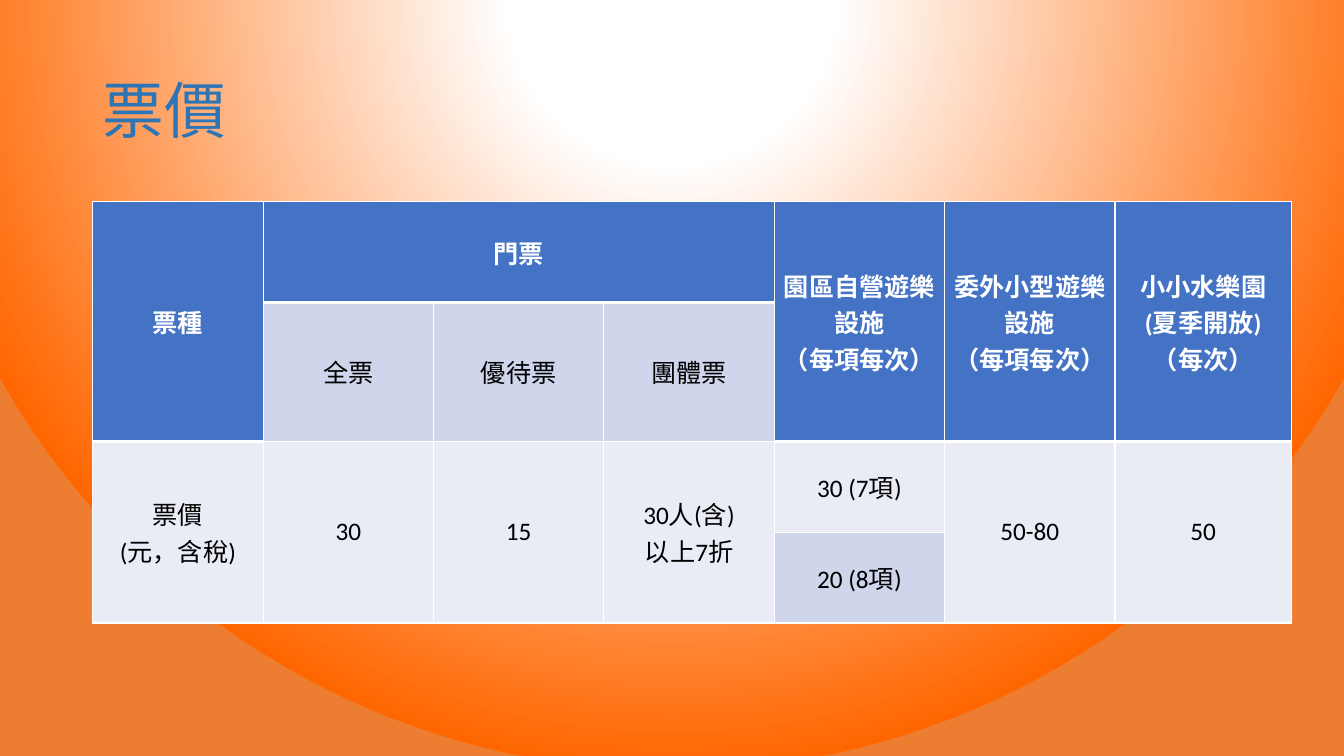
"""Build the ticket price slide."""
from lxml.etree import SubElement
from pptx import Presentation
from pptx.dml.color import RGBColor
from pptx.enum.text import MSO_ANCHOR, PP_ALIGN
from pptx.oxml import parse_xml
from pptx.oxml.ns import qn
from pptx.util import Inches, Pt

WHITE = RGBColor(0xFF, 0xFF, 0xFF)
BLACK = RGBColor(0x00, 0x00, 0x00)
BRIGHT_ORANGE = RGBColor(0xFF, 0x66, 0x00)
DULL_ORANGE = RGBColor(0xED, 0x7D, 0x31)
TITLE_BLUE = RGBColor(0x2E, 0x75, 0xB6)
HEADER_BLUE = RGBColor(0x44, 0x72, 0xC4)
DARK_BAND = RGBColor(0xCF, 0xD5, 0xEA)
LIGHT_BAND = RGBColor(0xE9, 0xEB, 0xF5)

COLUMN_WIDTHS = [1.69] * 6 + [1.75]
ROW_HEIGHTS = [1, 1.38, 0.9, 0.9]
HEADERS = [
    (0, 2, 1, "票種"),
    (1, 1, 3, "門票"),
    (4, 2, 1, "園區自營遊樂設施\n（每項每次）"),
    (5, 2, 1, "委外小型遊樂設施\n（每項每次）"),
    (6, 2, 1, "小小水樂園\n(夏季開放)\n（每次）"),
]
TICKET_KINDS = ["全票", "優待票", "團體票"]
PRICES = ["票價\n(元，含稅)", "30", "15", "30人(含)\n以上7折", "30 (7項)", "50-80", "50"]
SPLIT_COLUMN = 4


class SlideBuilder:
    """Hold the fonts and the current slide."""

    latin_font = "Calibri"
    asian_font = "Noto Sans CJK SC"

    def __init__(self, page):
        """Keep the page to draw on."""
        self.page = page

    def background(self, stops):
        """Fill the page with a circular gradient."""
        stop_xml = "".join(
            f'<a:gs pos="{percent * 1000}"><a:srgbClr val="{color}"/></a:gs>'
            for percent, color in stops
        )
        self.page.element.cSld.insert(0, parse_xml(
            '<p:bg xmlns:p="http://schemas.openxmlformats.org/presentationml/2006/main"'
            ' xmlns:a="http://schemas.openxmlformats.org/drawingml/2006/main"><p:bgPr>'
            f'<a:gradFill rotWithShape="1"><a:gsLst>{stop_xml}</a:gsLst><a:path path="circle">'
            '<a:fillToRect l="50000" t="-80000" r="50000" b="180000"/></a:path></a:gradFill>'
            "<a:effectLst/></p:bgPr></p:bg>"
        ))

    def add_text(self, para, text, size, color, bold=False, font=latin_font):
        """Add text to a paragraph, one run for each line."""
        for index, line in enumerate(text.split("\n")):
            if index:
                para.add_line_break()
            span = para.add_run()
            span.text = line
            span.font.size = Pt(size)
            span.font.bold = bold
            span.font.color.rgb = color
            span.font.name = font
            properties = span._r.get_or_add_rPr()
            SubElement(properties, qn("a:ea")).set("typeface", self.asian_font)

    def title(self, text, left, top, width, height):
        """Add the slide title."""
        box = self.page.shapes.add_textbox(
            Inches(left), Inches(top), Inches(width), Inches(height))
        frame = box.text_frame
        frame.word_wrap = True
        frame.vertical_anchor = MSO_ANCHOR.MIDDLE
        para = frame.paragraphs[0]
        para.line_spacing = 0.9
        self.add_text(para, text, 44, TITLE_BLUE, font=self.asian_font)

    def table(self, left, top, widths, heights):
        """Add an empty table with the given column widths and row heights."""
        table = self.page.shapes.add_table(
            len(heights), len(widths), Inches(left), Inches(top),
            Inches(sum(widths)), Inches(sum(heights))).table
        for column, width in zip(table.columns, widths):
            column.width = Inches(width)
        for row, height in zip(table.rows, heights):
            row.height = Inches(height)
        return table

    def borders(self, cell, bottom, top):
        """Draw white borders around a cell."""
        properties = cell._tc.get_or_add_tcPr()
        sides = [("lnL", 1), ("lnR", 1), ("lnT", top), ("lnB", bottom)]
        for index, (side, points) in enumerate(sides):
            line = properties.makeelement(qn(f"a:{side}"), {"w": str(int(Pt(points)))})
            fill = SubElement(line, qn("a:solidFill"))
            SubElement(fill, qn("a:srgbClr")).set("val", str(WHITE))
            properties.insert(index, line)

    def cell(self, table, row, column, text, fill, rows=1, columns=1, header=False, top=1):
        """Fill one table cell, merged over the given rows and columns."""
        origin = table.cell(row, column)
        if rows * columns > 1:
            origin.merge(table.cell(row + rows - 1, column + columns - 1))
        for row_index in range(row, row + rows):
            for column_index in range(column, column + columns):
                part = table.cell(row_index, column_index)
                part.fill.solid()
                part.fill.fore_color.rgb = fill
                self.borders(part, 3 if header else 1, top)
        origin.vertical_anchor = MSO_ANCHOR.MIDDLE
        origin.margin_left = origin.margin_right = Inches(0.03)
        origin.margin_top = origin.margin_bottom = Inches(0.03)
        para = origin.text_frame.paragraphs[0]
        para.alignment = PP_ALIGN.CENTER
        self.add_text(para, text, 18, WHITE if header else BLACK, header)


def main():
    """Create and save the deck."""
    deck = Presentation()
    deck.slide_width, deck.slide_height = Inches(13.33), Inches(7.5)
    builder = SlideBuilder(deck.slides.add_slide(deck.slide_layouts[6]))
    builder.background([(21, WHITE), (100, BRIGHT_ORANGE), (100, DULL_ORANGE)])
    builder.title("票價", 0.92, 0.4, 11.5, 1.45)
    table = builder.table(0.92, 2, COLUMN_WIDTHS, ROW_HEIGHTS)
    for column, rows, columns, text in HEADERS:
        builder.cell(table, 0, column, text, HEADER_BLUE, rows, columns, header=True)
    for column, text in enumerate(TICKET_KINDS, 1):
        builder.cell(table, 1, column, text, DARK_BAND, top=3)
    for column, text in enumerate(PRICES):
        rows = 1 if column == SPLIT_COLUMN else 2
        top = 1 if 1 <= column <= len(TICKET_KINDS) else 3
        builder.cell(table, 2, column, text, LIGHT_BAND, rows, top=top)
    builder.cell(table, 3, SPLIT_COLUMN, "20 (8項)", DARK_BAND)
    deck.save("out.pptx")


if __name__ == "__main__":
    main()
